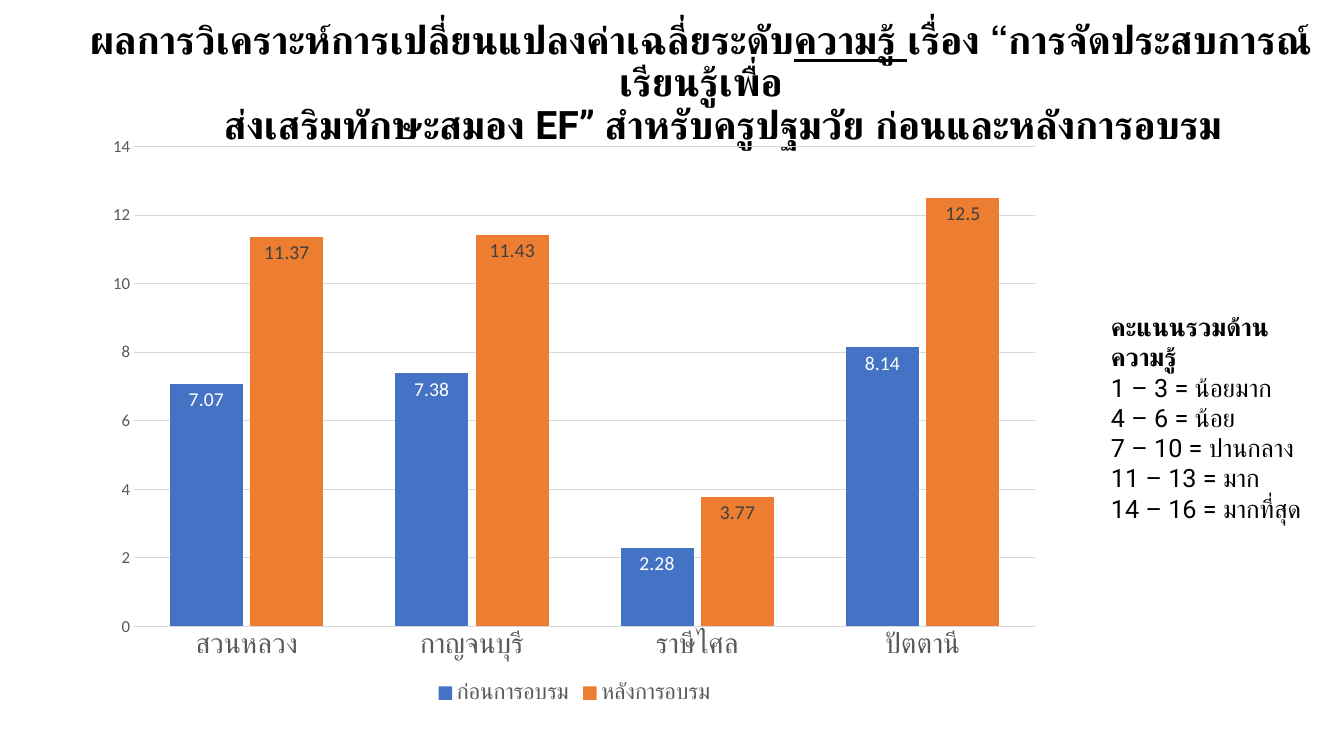
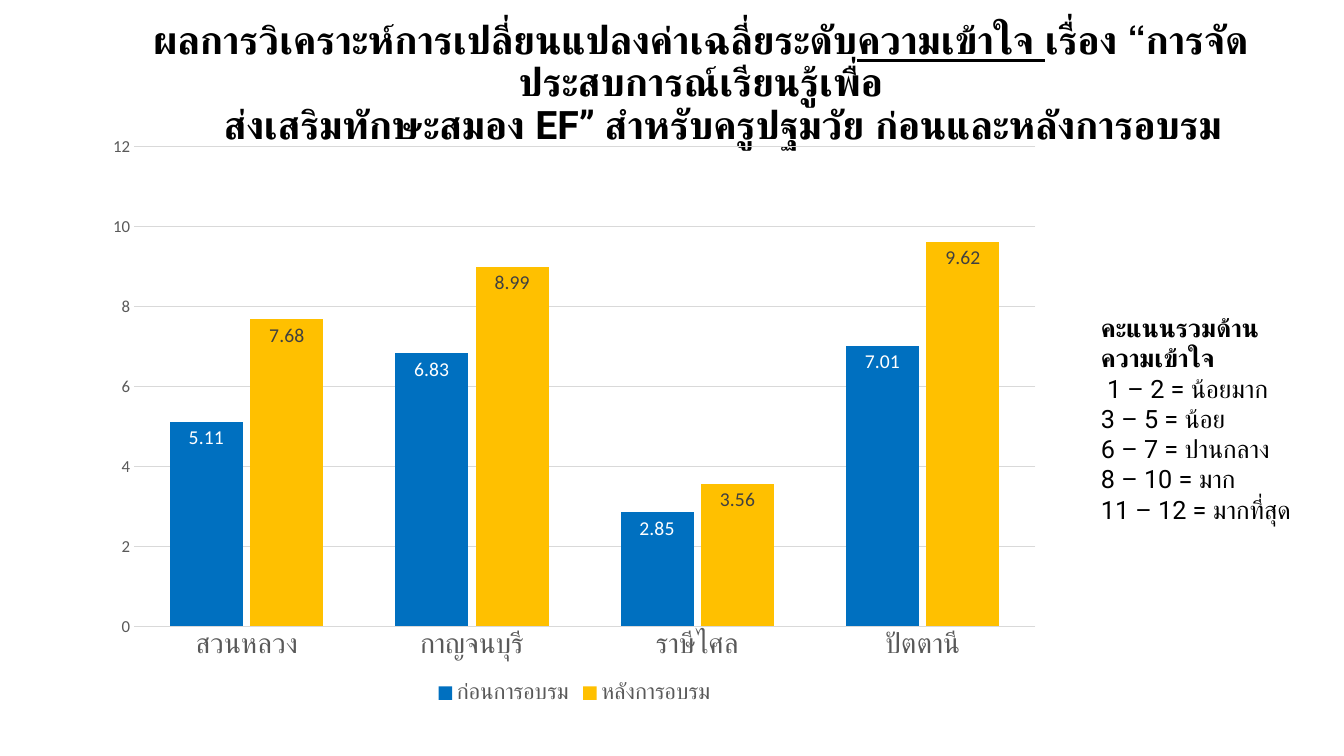
from dataclasses import dataclass

from pptx import Presentation
from pptx.chart.data import CategoryChartData
from pptx.dml.color import RGBColor
from pptx.enum.chart import XL_CHART_TYPE, XL_LABEL_POSITION, XL_LEGEND_POSITION, XL_TICK_MARK
from pptx.enum.text import MSO_ANCHOR, MSO_AUTO_SIZE, PP_ALIGN
from pptx.util import Inches, Pt

BLACK = "000000"
AXIS_TEXT = "595959"
GRID = "D9D9D9"
LABEL_COLORS = ("FFFFFF", "404040")
TITLE_FONT = "Roboto"
HEADING_FONT = "Times New Roman"
CHART_FONT = "Calibri"
PROVINCES = ("สวนหลวง", "กาญจนบุรี", "ราษีไศล", "ปัตตานี")
SERIES_NAMES = ("ก่อนการอบรม", "หลังการอบรม")
LEVELS = ("น้อยมาก", "น้อย", "ปานกลาง", "มาก", "มากที่สุด")


@dataclass
class Result:
    topic: str
    ranges: tuple[str, ...]
    scale_left: float
    scale_top: float
    values: tuple[tuple[float, ...], ...]
    colors: tuple[str, str]
    axis_maximum: int


RESULTS = (
    Result("ความรู้", ("1 – 3", "4 – 6", "7 – 10", "11 – 13", "14 – 16"), 10.92, 3.04,
           ((7.07, 7.38, 2.28, 8.14), (11.37, 11.43, 3.77, 12.5)),
           ("4472C4", "ED7D31"), 14),
    Result("ความเข้าใจ", (" 1 – 2", "3 – 5", "6 – 7", "8 – 10", "11 – 12"), 10.82, 3.05,
           ((5.11, 6.83, 2.85, 7.01), (7.68, 8.99, 3.56, 9.62)),
           ("0070C0", "FFC000"), 12),
)


def color(value: str) -> RGBColor:
    return RGBColor.from_string(value)


def set_font(font, size: float, fill: str, name: str, bold: bool = False) -> None:
    font.size = Pt(size)
    font.name = name
    font.bold = bold
    font.color.rgb = color(fill)


def add_title(slide, result: Result) -> None:
    title = slide.shapes.title
    title.left, title.top = Inches(0.76), Inches(0.11)
    title.width, title.height = Inches(12.38), Inches(1.45)
    frame = title.text_frame
    frame.word_wrap = True
    frame.auto_size = MSO_AUTO_SIZE.NONE
    frame.vertical_anchor = MSO_ANCHOR.MIDDLE
    first = frame.paragraphs[0]
    first.add_run().text = "ผลการวิเคราะห์การเปลี่ยนแปลงค่าเฉลี่ยระดับ"
    topic = first.add_run()
    topic.text = f"{result.topic} "
    topic.font.underline = True
    first.add_run().text = "เรื่อง “การจัดประสบการณ์เรียนรู้เพื่อ"
    second = frame.add_paragraph()
    second.text = "ส่งเสริมทักษะสมอง EF” สำหรับครูปฐมวัย ก่อนและหลังการอบรม"
    second._p.get_or_add_pPr().set("marL", str(Inches(0.44)))
    for paragraph in frame.paragraphs:
        paragraph.alignment = PP_ALIGN.CENTER
        paragraph.line_spacing = 0.9
        set_font(paragraph.font, 28, BLACK, TITLE_FONT, True)


def add_scale(slide, result: Result) -> None:
    box = slide.shapes.add_textbox(
        Inches(result.scale_left), Inches(result.scale_top), Inches(2.22), Inches(1.92))
    frame = box.text_frame
    frame.word_wrap = True
    frame.auto_size = MSO_AUTO_SIZE.SHAPE_TO_FIT_TEXT
    heading = frame.paragraphs[0]
    heading.text = f"คะแนนรวมด้าน{result.topic}"
    set_font(heading.font, 18, BLACK, HEADING_FONT, True)
    for score_range, level in zip(result.ranges, LEVELS):
        paragraph = frame.add_paragraph()
        paragraph.text = f"{score_range} = {level}"
        set_font(paragraph.font, 18, BLACK, TITLE_FONT)


def add_score_chart(slide, result: Result) -> None:
    data = CategoryChartData()
    data.categories = PROVINCES
    for name, values in zip(SERIES_NAMES, result.values):
        data.add_series(name, values)
    chart = slide.shapes.add_chart(
        XL_CHART_TYPE.COLUMN_CLUSTERED,
        Inches(0.93), Inches(1.24), Inches(9.53), Inches(5.79), data).chart
    chart.has_title = False
    set_font(chart.font, 10, BLACK, CHART_FONT)
    chart.has_legend = True
    chart.legend.position = XL_LEGEND_POSITION.BOTTOM
    chart.legend.include_in_layout = False
    set_font(chart.legend.font, 16, AXIS_TEXT, CHART_FONT)

    for axis, size in ((chart.category_axis, 20), (chart.value_axis, 12)):
        axis.major_tick_mark = XL_TICK_MARK.NONE
        axis.minor_tick_mark = XL_TICK_MARK.NONE
        set_font(axis.tick_labels.font, size, AXIS_TEXT, CHART_FONT)
    value_axis = chart.value_axis
    value_axis.minimum_scale = 0
    value_axis.maximum_scale = result.axis_maximum
    value_axis.major_unit = 2
    value_axis.format.line.fill.background()
    for line in (chart.category_axis.format.line, value_axis.major_gridlines.format.line):
        line.color.rgb = color(GRID)
        line.width = Pt(0.75)

    plot = chart.plots[0]
    plot.gap_width = 98
    plot.overlap = -10
    plot.vary_by_categories = False
    for series, fill, label_color in zip(plot.series, result.colors, LABEL_COLORS):
        series.format.fill.solid()
        series.format.fill.fore_color.rgb = color(fill)
        labels = series.data_labels
        labels.show_value = True
        labels.position = XL_LABEL_POSITION.INSIDE_END
        set_font(labels.font, 14, label_color, CHART_FONT)


def main() -> None:
    presentation = Presentation()
    presentation.slide_width = Inches(13.33)
    presentation.slide_height = Inches(7.5)
    for result in RESULTS:
        slide = presentation.slides.add_slide(presentation.slide_layouts[5])
        add_title(slide, result)
        add_scale(slide, result)
        add_score_chart(slide, result)
    presentation.save("out.pptx")


if __name__ == "__main__":
    main()
